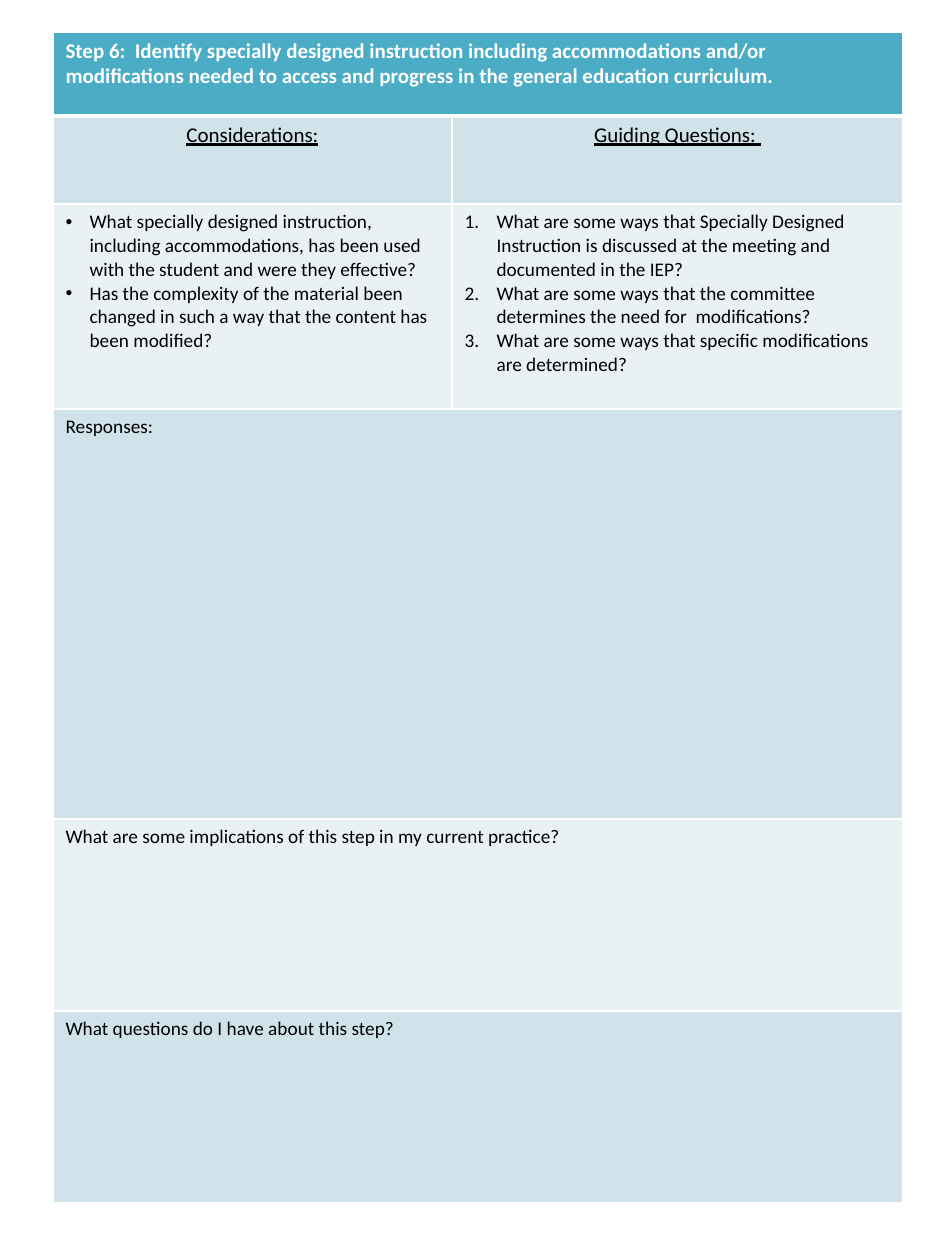
from lxml import etree
from pptx import Presentation
from pptx.dml.color import RGBColor
from pptx.enum.text import PP_ALIGN
from pptx.oxml.ns import qn
from pptx.util import Emu, Pt

PX = 914400 / 126
FONT = "Calibri"
WHITE = RGBColor(0xFF, 0xFF, 0xFF)
BLACK = RGBColor(0x00, 0x00, 0x00)
TEAL = RGBColor(0x4B, 0xAC, 0xC6)
BAND_DARK = RGBColor(0xD0, 0xE3, 0xEA)
BAND_LIGHT = RGBColor(0xE9, 0xF1, 0xF5)
LEFT, CENTER = PP_ALIGN.LEFT, PP_ALIGN.CENTER

COLUMN_WIDTHS = [399, 451]
ROW_HEIGHTS = [84, 88, 205, 410, 192, 192]
ROW_FILLS = [TEAL] + [BAND_DARK, BAND_LIGHT] * 2 + [BAND_DARK]

STEP = ("Step 6:  Identify specially designed instruction including accommodations "
        "and/or modifications needed to access and progress in the general education curriculum.")
HEADINGS = ["Considerations:", "Guiding Questions: "]
CONSIDERATIONS = [
    "What specially designed instruction, including accommodations, has been used "
    "with the student and were they effective?",
    "Has the complexity of the material been changed in such a way that the content "
    "has been modified?",
]
GUIDING_QUESTIONS = [
    "What are some ways that Specially Designed Instruction is discussed at the meeting "
    "and documented in the IEP?",
    "What are some ways that the committee determines the need for  modifications?",
    "What are some ways that specific modifications are determined?",
]
PROMPTS = [
    "Responses:",
    "What are some implications of this step in my current practice?",
    "What questions do I have about this step?",
]


def px(length):
    return Emu(round(length * PX))


def add_marker(paragraph, marker, indent):
    properties = paragraph._p.get_or_add_pPr()
    properties.set("marL", str(px(indent)))
    properties.set("indent", str(-px(indent)))
    if marker == "number":
        etree.SubElement(properties, qn("a:buFont"), typeface="+mj-lt")
        etree.SubElement(properties, qn("a:buAutoNum"), type="arabicPeriod")
    else:
        etree.SubElement(properties, qn("a:buFont"), typeface="Arial")
        etree.SubElement(properties, qn("a:buChar"), char=marker)


def write_text(cell, lines, size=11, color=BLACK, bold=False, underline=False,
               align=LEFT, marker=None, indent=0):
    frame = cell.text_frame
    for index, line in enumerate(lines):
        paragraph = frame.add_paragraph() if index else frame.paragraphs[0]
        paragraph.alignment = align
        if marker:
            add_marker(paragraph, marker, indent)
        run = paragraph.add_run()
        run.text = line
        font = run.font
        font.name, font.size, font.color.rgb = FONT, Pt(size), color
        font.bold, font.underline = bold, underline


def set_borders(cell, **widths):
    properties = cell._tc.get_or_add_tcPr()
    for position, side in enumerate("LRTB"):
        line = etree.Element(qn(f"a:ln{side}"), w=str(Pt(widths.get(side, 1))))
        fill = etree.SubElement(line, qn("a:solidFill"))
        etree.SubElement(fill, qn("a:srgbClr"), val=str(WHITE))
        properties.insert(position, line)


def add_worksheet(slide, left, top):
    frame = slide.shapes.add_table(
        len(ROW_HEIGHTS), len(COLUMN_WIDTHS), px(left), px(top),
        px(sum(COLUMN_WIDTHS)), px(sum(ROW_HEIGHTS)))
    table = frame.table
    table.horz_banding = False
    for column, width in zip(table.columns, COLUMN_WIDTHS):
        column.width = px(width)
    for index, (row, height, color) in enumerate(zip(table.rows, ROW_HEIGHTS, ROW_FILLS)):
        row.height = px(height)
        for cell in row.cells:
            cell.fill.solid()
            cell.fill.fore_color.rgb = color
            set_borders(cell, T=3 if index == 1 else 1, B=3 if index == 0 else 1)

    for index in (0, 3, 4, 5):
        table.cell(index, 0).merge(table.cell(index, 1))

    write_text(table.cell(0, 0), [STEP], size=12, color=WHITE, bold=True)
    for index, heading in enumerate(HEADINGS):
        write_text(table.cell(1, index), [heading], size=12, underline=True, align=CENTER)
    write_text(table.cell(2, 0), CONSIDERATIONS, marker="•", indent=24)
    write_text(table.cell(2, 1), GUIDING_QUESTIONS, marker="number", indent=32)
    for index, prompt in enumerate(PROMPTS, start=3):
        write_text(table.cell(index, 0), [prompt])


def main():
    deck = Presentation()
    deck.slide_width, deck.slide_height = px(945), px(1260)
    slide = deck.slides.add_slide(deck.slide_layouts[6])
    add_worksheet(slide, 53, 32)
    deck.save("out.pptx")


if __name__ == "__main__":
    main()
